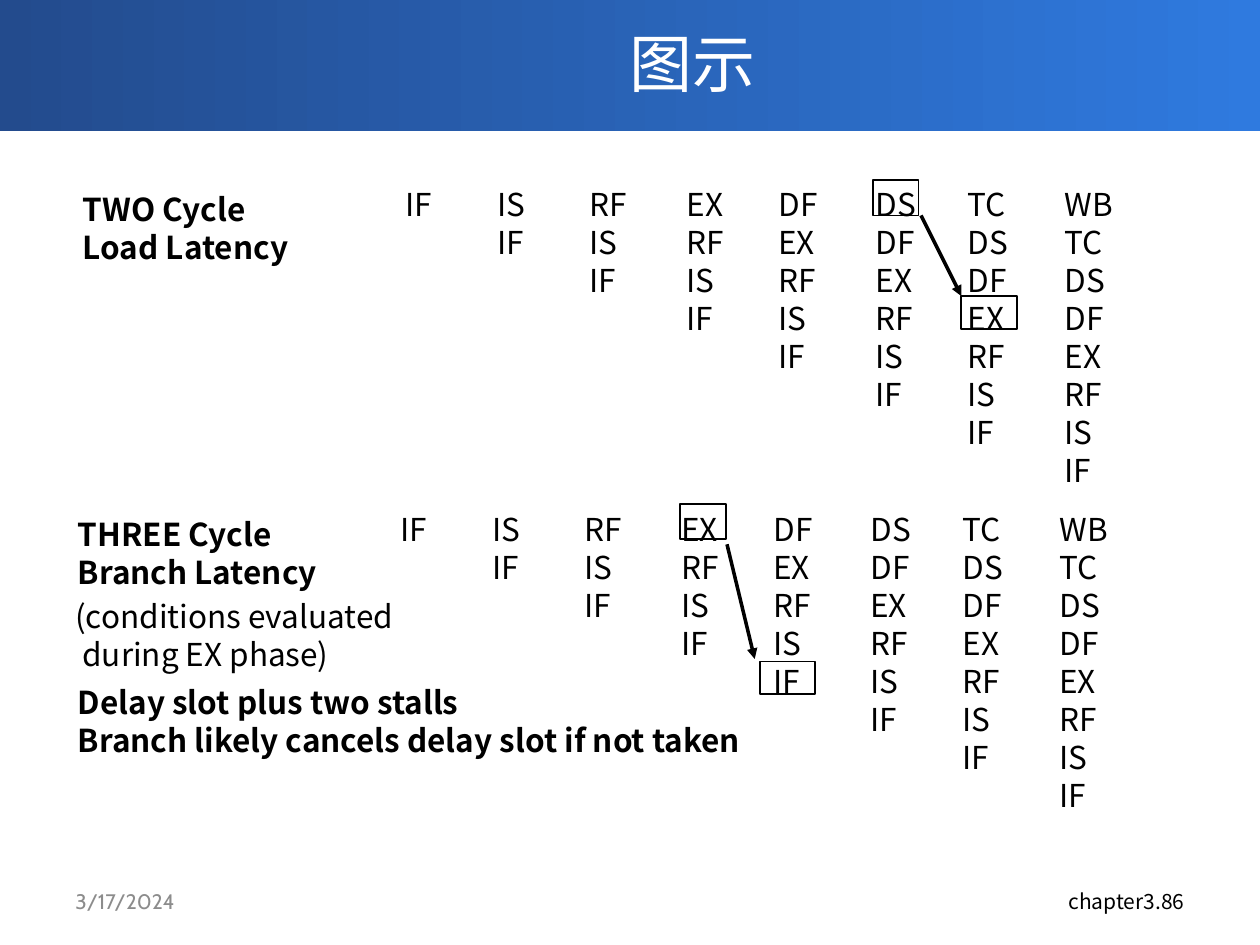
from dataclasses import dataclass

from lxml.etree import SubElement
from pptx import Presentation
from pptx.dml.color import RGBColor
from pptx.enum.shapes import MSO_CONNECTOR, MSO_SHAPE
from pptx.enum.text import MSO_ANCHOR, PP_ALIGN
from pptx.oxml.ns import qn
from pptx.util import Inches, Pt


@dataclass(frozen=True)
class Theme:
    font: str = "Noto Sans CJK SC"
    date_font: str = "Cabin"
    ink: str = "000000"
    white: str = "FFFFFF"
    grey: str = "8C8C8C"
    deep: str = "234B8D"
    bright: str = "2F7ADF"
    title: int = 36
    body: int = 18
    small: int = 12
    lead: float = 21.7


theme = Theme()
WIDE, HIGH = 10, 7.5
ROW, PAD = 0.3, 0.1
DROP = 0.02  # offset of text for the tight line spacing

STAGES = ["IF", "IS", "RF", "EX", "DF", "DS", "TC", "WB"]
STEPS = [0, 0.73, 1.46, 2.23, 2.96, 3.73, 4.46, 5.23]
WIDTHS = [0.42, 0.43, 0.5, 0.5, 0.53, 0.55, 0.55, 0.61]

# Boxes are left, top, width, height; arrows are x1, y1, x2, y2
CHARTS = [
    {"at": (3.12, 1.4),
     "boxes": [(6.93, 1.43, 0.36, 0.28), (7.63, 2.35, 0.44, 0.26)],
     "arrow": (7.31, 1.71, 7.63, 2.35)},
    {"at": (3.08, 3.98),
     "boxes": [(5.4, 4, 0.36, 0.28), (6.03, 5.25, 0.44, 0.26)],
     "arrow": (5.77, 4.32, 5.99, 5.23)},
]

# Left, top, width, bold, lines
LABELS = [
    (0.56, 1.44, 1.86, True, ["TWO Cycle", "Load Latency"]),
    (0.52, 4.02, 2.13, True, ["THREE Cycle", "Branch Latency"]),
    (0.5, 4.67, 2.8, False, ["(conditions evaluated", " during EX phase)"]),
    (0.52, 5.35, 5.66, True, ["Delay slot plus two stalls",
                              "Branch likely cancels delay slot if not taken"]),
]


def color(code):
    return RGBColor.from_string(code)


def write(slide, at, lines, size, ink=theme.ink, font=theme.font, bold=False,
          align=PP_ALIGN.LEFT, anchor=MSO_ANCHOR.MIDDLE, lead=None):
    frame = slide.shapes.add_textbox(*map(Inches, at)).text_frame
    frame.word_wrap = True
    frame.vertical_anchor = anchor
    frame.text = "\n".join(lines)
    for para in frame.paragraphs:
        para.alignment = align
        if lead:
            para.line_spacing = Pt(lead)
        for run in para.runs:
            run.font.name = font
            run.font.size = Pt(size)
            run.font.bold = bold
            run.font.color.rgb = color(ink)
            east = SubElement(run.font._element, qn("a:ea"))
            east.set("typeface", font)


def block(slide, left, top, width, lines, bold=False):
    """Write body lines in a box as high as its rows."""
    at = (left, top + DROP, width, PAD + ROW * len(lines))
    write(slide, at, lines, theme.body, bold=bold,
          anchor=MSO_ANCHOR.TOP, lead=theme.lead)


def rect(slide, at):
    shape = slide.shapes.add_shape(MSO_SHAPE.RECTANGLE, *map(Inches, at))
    shape.shadow.inherit = False
    return shape


def frame_box(slide, at):
    box = rect(slide, at)
    box.fill.background()
    box.line.color.rgb = color(theme.ink)
    box.line.width = Pt(1)


def arrow(slide, ends):
    link = slide.shapes.add_connector(MSO_CONNECTOR.STRAIGHT, *map(Inches, ends))
    link.line.color.rgb = color(theme.ink)
    link.line.width = Pt(2)
    SubElement(link.line._get_or_add_ln(), qn("a:tailEnd")).set("type", "triangle")
    SubElement(link._element.spPr, qn("a:effectLst"))


def banner(slide):
    bar = rect(slide, (0, -0.03, WIDE, 1.07))
    bar.line.fill.background()
    bar.fill.gradient()
    bar.fill.gradient_angle = 0
    for stop, code in zip(bar.fill.gradient_stops, (theme.deep, theme.bright)):
        stop.color.rgb = color(code)
    write(slide, (1, 0, 9, 0.99), ["图示"], theme.title, theme.white,
          align=PP_ALIGN.CENTER)


def footer(slide):
    top, width, high, edge = 6.95, 2.33, 0.4, 0.5
    write(slide, (edge, top, width, high), ["3/17/2024"], theme.small,
          theme.grey, theme.date_font)
    write(slide, (WIDE - edge - width, top, width, high), ["chapter3.86"],
          theme.small, align=PP_ALIGN.RIGHT)


def pipeline(slide, chart):
    """Each column lists the stages reached so far, newest first."""
    left, top = chart["at"]
    for col, (step, width) in enumerate(zip(STEPS, WIDTHS)):
        block(slide, left + step, top, width, STAGES[col::-1])
    arrow(slide, chart["arrow"])
    for at in chart["boxes"]:
        frame_box(slide, at)


def main():
    deck = Presentation()
    deck.slide_width, deck.slide_height = Inches(WIDE), Inches(HIGH)
    slide = deck.slides.add_slide(deck.slide_layouts[6])
    banner(slide)
    footer(slide)
    for chart in CHARTS:
        pipeline(slide, chart)
    for left, top, width, bold, lines in LABELS:
        block(slide, left, top, width, lines, bold)
    deck.save("out.pptx")


if __name__ == "__main__":
    main()
